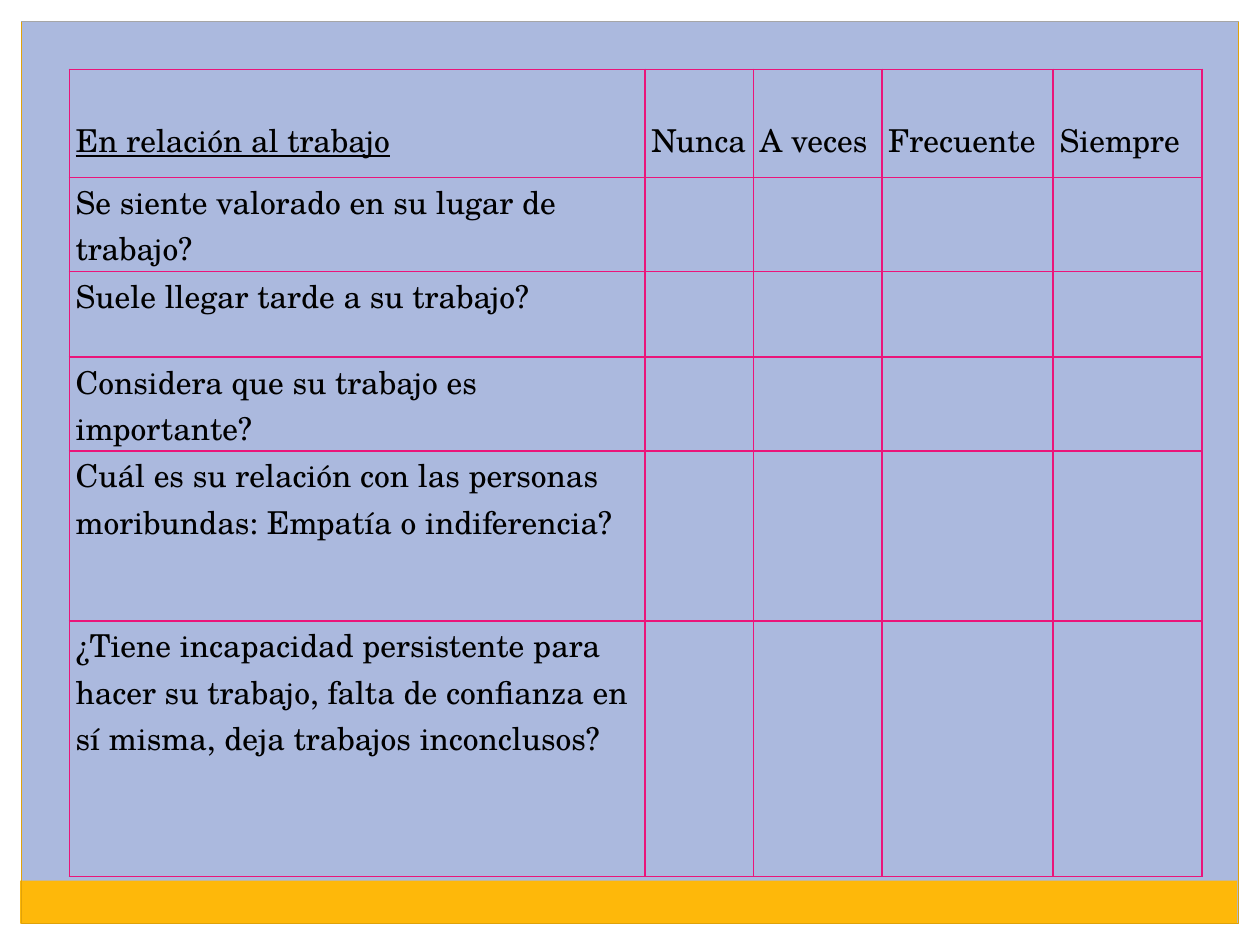
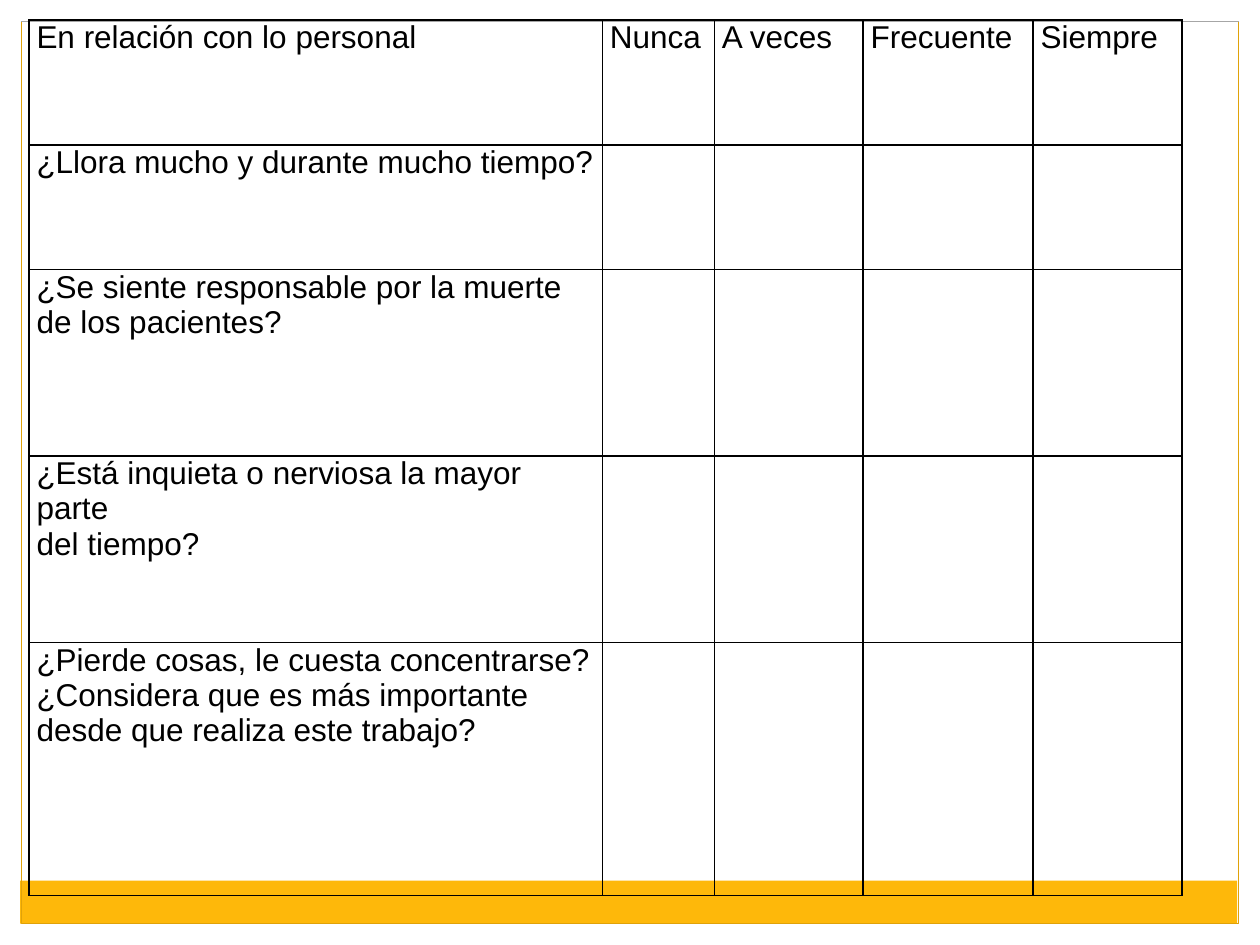
from dataclasses import dataclass

from lxml import etree
from pptx import Presentation
from pptx.dml.color import RGBColor
from pptx.enum.shapes import MSO_CONNECTOR, MSO_SHAPE
from pptx.enum.text import PP_ALIGN
from pptx.oxml.ns import qn
from pptx.util import Inches, Pt

RECTANGLE = MSO_SHAPE.RECTANGLE
STRAIGHT = MSO_CONNECTOR.STRAIGHT
LEFT, JUSTIFY = PP_ALIGN.LEFT, PP_ALIGN.JUSTIFY

WIDTH, HEIGHT, EDGE = 10, 7.5, 0.17
ANSWERS = ["Nunca", "A veces", "Frecuente", "Siempre"]


@dataclass(frozen=True)
class Theme:
    white: str = "FFFFFF"
    black: str = "000000"
    lavender: str = "ABB9DE"
    gold: str = "FEB80A"
    frame: str = "E0A209"
    rule: str = "A6A6A6"
    pink: str = "EA157A"
    serif: str = "TeX Gyre Schola"
    sans: str = "Arial"
    text_size: float = 18
    frame_width: float = 0.75
    rule_width: float = 0.5
    grid_width: float = 1


@dataclass(frozen=True)
class GridStyle:
    font: str
    border: str
    side_margin: float
    top_margin: float
    header_margin: float
    header_underline: bool


THEME = Theme()
WORK_STYLE = GridStyle(THEME.serif, THEME.pink, 0.05, 0.01, 0.38, True)
PERSONAL_STYLE = GridStyle(THEME.sans, THEME.black, 0.06, 0, 0, False)


class SurveyDeck:
    def __init__(self, theme):
        self.theme = theme
        self.deck = Presentation()
        self.deck.slide_width = Inches(WIDTH)
        self.deck.slide_height = Inches(HEIGHT)
        self.page = None

    def add_page(self, background, bottom_edge=True):
        self.page = self.deck.slides.add_slide(self.deck.slide_layouts[6])
        fill = self.page.background.fill
        fill.solid()
        fill.fore_color.rgb = RGBColor.from_string(background)
        self.add_frame(bottom_edge)

    def add_frame(self, bottom_edge):
        # White margins around the page
        edges = [(0, 0, WIDTH, EDGE), (WIDTH - EDGE, 0, EDGE, HEIGHT),
                 (0, 0, EDGE, HEIGHT)]
        if bottom_edge:
            edges.insert(0, (0, HEIGHT - EDGE, WIDTH, EDGE))
        for edge in edges:
            self.add_box(*edge, fill=self.theme.white)
        # Gold band, outline and top rule
        self.add_box(0.16, 6.99, 9.66, 0.34, fill=self.theme.gold)
        self.add_box(EDGE, EDGE, WIDTH - 2 * EDGE, HEIGHT - 2 * EDGE,
                     line=self.theme.frame)
        self.add_rule(EDGE, EDGE, WIDTH - EDGE, EDGE)

    def add_box(self, left, top, width, height, fill=None, line=None):
        box = self.page.shapes.add_shape(
            RECTANGLE, Inches(left), Inches(top), Inches(width), Inches(height))
        box.shadow.inherit = False
        if fill:
            box.fill.solid()
            box.fill.fore_color.rgb = RGBColor.from_string(fill)
        else:
            box.fill.background()
        if line:
            box.line.color.rgb = RGBColor.from_string(line)
            box.line.width = Pt(self.theme.frame_width)
        else:
            box.line.fill.background()

    def add_rule(self, x1, y1, x2, y2):
        rule = self.page.shapes.add_connector(
            STRAIGHT, Inches(x1), Inches(y1), Inches(x2), Inches(y2))
        rule.line.color.rgb = RGBColor.from_string(self.theme.rule)
        rule.line.width = Pt(self.theme.rule_width)
        etree.SubElement(rule._element.spPr, qn("a:effectLst"))

    def add_survey(self, left, top, widths, heights, heading, questions, style):
        rows = [[[heading]] + [[answer] for answer in ANSWERS]]
        rows += [[question] + [[]] * len(ANSWERS) for question in questions]
        table = self.page.shapes.add_table(
            len(rows), len(widths), Inches(left), Inches(top),
            Inches(sum(widths)), Inches(sum(heights))).table
        table.first_row = table.horz_banding = False
        for column, width in zip(table.columns, widths):
            column.width = Inches(width)
        for row, height in zip(table.rows, heights):
            row.height = Inches(height)
        for row_index, row in enumerate(rows):
            for column_index, lines in enumerate(row):
                cell = table.cell(row_index, column_index)
                self.format_cell(cell, style, row_index == 0)
                underline = style.header_underline and row_index == column_index == 0
                align = JUSTIFY if column_index else LEFT
                self.write_cell(cell, lines, style.font, align, underline)

    def format_cell(self, cell, style, is_header):
        cell.margin_left = cell.margin_right = Inches(style.side_margin)
        cell.margin_top = Inches(style.header_margin if is_header else style.top_margin)
        cell.margin_bottom = 0
        cell.fill.background()
        properties = cell._tc.get_or_add_tcPr()
        for index, side in enumerate(("a:lnL", "a:lnR", "a:lnT", "a:lnB")):
            border = etree.Element(qn(side), w=str(Pt(self.theme.grid_width)))
            fill = etree.SubElement(border, qn("a:solidFill"))
            etree.SubElement(fill, qn("a:srgbClr"), val=style.border)
            properties.insert(index, border)

    def write_cell(self, cell, lines, font, align, underline):
        frame = cell.text_frame
        for index, line in enumerate(lines):
            para = frame.add_paragraph() if index else frame.paragraphs[0]
            para.alignment = align
            span = para.add_run()
            span.text = line
            span.font.name = font
            span.font.size = Pt(self.theme.text_size)
            span.font.color.rgb = RGBColor.from_string(self.theme.black)
            span.font.underline = underline


def main():
    survey = SurveyDeck(THEME)

    # Questions about work
    survey.add_page(THEME.lavender)
    survey.add_survey(
        0.55, 0.55, [4.57, 0.86, 1.02, 1.36, 1.18],
        [0.86, 0.74, 0.68, 0.74, 1.35, 2.03],
        "En relación al trabajo",
        [["Se siente valorado en su lugar de trabajo?"],
         ["Suele llegar tarde a su trabajo?"],
         ["Considera que su trabajo es importante?"],
         ["Cuál es su relación con las personas",
          "moribundas: Empatía o indiferencia?"],
         ["¿Tiene incapacidad persistente para hacer su trabajo, falta de "
          "confianza en sí misma, deja trabajos inconclusos?"]],
        WORK_STYLE)

    # Questions about personal life
    survey.add_page(THEME.white, bottom_edge=False)
    survey.add_survey(
        0.23, 0.16, [4.55, 0.89, 1.18, 1.35, 1.18],
        [0.99, 0.99, 1.48, 1.48, 2.01],
        "En relación con lo personal",
        [["¿Llora mucho y durante mucho tiempo?"],
         ["¿Se siente responsable por la muerte", "de los pacientes?"],
         ["¿Está inquieta o nerviosa la mayor parte", "del tiempo?"],
         ["¿Pierde cosas, le cuesta concentrarse?",
          "¿Considera que es más importante desde que realiza este trabajo?"]],
        PERSONAL_STYLE)

    survey.deck.save("out.pptx")


if __name__ == "__main__":
    main()
